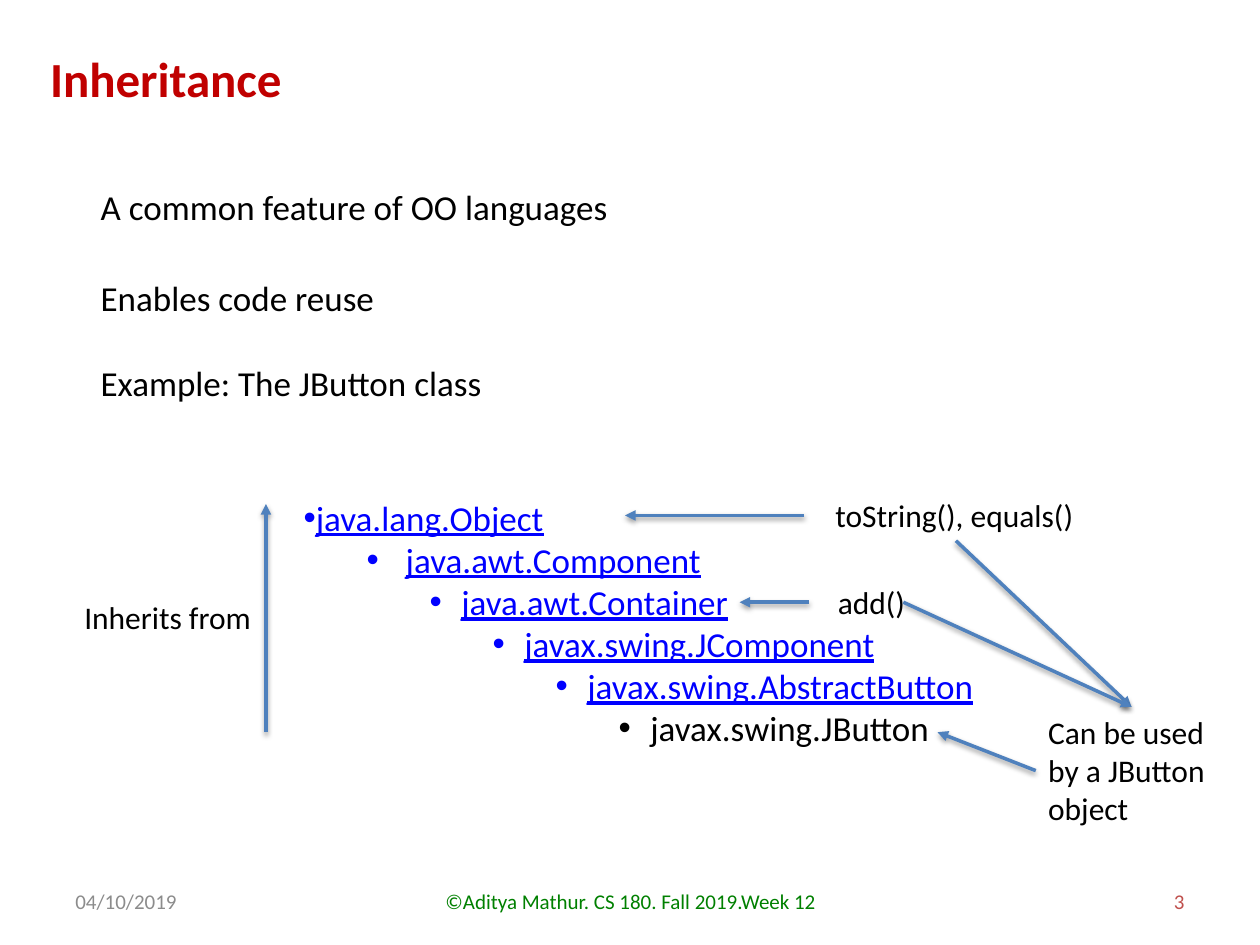
from lxml import etree
from pptx import Presentation
from pptx import util as u
from pptx.dml.color import RGBColor
from pptx.enum import shapes, text
from pptx.oxml.ns import qn

COLOURS = {"title": "C00000", "body": "000000", "link": "0000FF", "arrow": "4F81BD",
           "date": "8C8C8C", "credit": "008000", "number": "C0504D"}
FONT = "Calibri"


def colour(name):
    return RGBColor.from_string(COLOURS[name])


def format_para(para, size, tint, bold=False, underline=False):
    for span in para.runs:
        span.font.name = FONT
        span.font.size = u.Pt(size)
        span.font.bold = bold
        span.font.underline = underline
        span.font.color.rgb = colour(tint)


def add_text(page, place, words, size=18, tint="body", bold=False, wrap=False,
             align=text.PP_ALIGN.LEFT, anchor=text.MSO_ANCHOR.TOP):
    box = page.shapes.add_textbox(*(u.Cm(value) for value in place))
    frame = box.text_frame
    frame.text = words
    frame.word_wrap = wrap
    frame.vertical_anchor = anchor
    for para in frame.paragraphs:
        para.alignment = align
        format_para(para, size, tint, bold)
    return box


def add_arrow(page, start, end):
    arrow = page.shapes.add_connector(shapes.MSO_CONNECTOR.STRAIGHT,
                                      *(u.Cm(value) for value in (*start, *end)))
    arrow.line.color.rgb = colour("arrow")
    arrow.line.width = u.Pt(2)
    properties = arrow._element.spPr
    etree.SubElement(properties.find(qn("a:ln")), qn("a:tailEnd"), type="triangle")
    # Soft shadow straight below the line
    effects = etree.SubElement(properties, qn("a:effectLst"))
    shadow = etree.SubElement(effects, qn("a:outerShdw"), blurRad=str(u.Pt(3.1)),
                              dist=str(u.Pt(1.6)), dir="5400000", rotWithShape="0")
    black = etree.SubElement(shadow, qn("a:srgbClr"), val="000000")
    etree.SubElement(black, qn("a:alpha"), val="38000")
    return arrow


def add_footer(page, left, top, width, height):
    side, middle = 5.92, 8.05
    parts = [
        (0, side, "04/10/2019", "date", text.PP_ALIGN.LEFT),
        (7.42, middle, "©Aditya Mathur. CS 180. Fall 2019.Week 12", "credit",
         text.PP_ALIGN.CENTER),
        (width - side, side, "3", "number", text.PP_ALIGN.RIGHT),
    ]
    for offset, part_width, words, tint, align in parts:
        add_text(page, (left + offset, top, part_width, height), words, 12, tint,
                 wrap=True, align=align, anchor=text.MSO_ANCHOR.MIDDLE)


def add_points(page, left, top):
    points = [(0, 10.82, "A common feature of OO languages"),
              (1.83, 6.07, "Enables code reuse"),
              (3.55, 8.28, "Example: The JButton class")]
    for offset, width, words in points:
        add_text(page, (left, top + offset, width, 1.12), words, 20)


def add_hierarchy(page, left, top, width, height):
    classes = ["java.lang.Object", "java.awt.Component", "java.awt.Container",
               "javax.swing.JComponent", "javax.swing.AbstractButton",
               "javax.swing.JButton"]
    box = add_text(page, (left, top, width, height), "\n".join(classes), 20, wrap=True)
    last = len(classes) - 1
    for level, para in enumerate(box.text_frame.paragraphs):
        para.level = level
        linked = level < last
        format_para(para, 20, "link" if linked else "body", underline=linked)
        # Each level steps in by 1.27 cm; the second has a wider bullet gap
        gap = (0, 0.79)[level] if level < 2 else 0.64
        margin = 1.27 * level + gap if level else 0
        properties = para._p.get_or_add_pPr()
        properties.set("marL", str(u.Cm(margin)))
        properties.set("indent", str(-u.Cm(gap)))
        etree.SubElement(properties, qn("a:buFont"), typeface="Arial")
        etree.SubElement(properties, qn("a:buChar"), char="•")


def add_annotations(page, left, top):
    def at(x, y):
        return left + x, top + y

    # Labels
    add_text(page, (*at(0, 2.06), 3.91, 1.02), "Inherits from")
    object_methods = add_text(page, (*at(15.14, 0), 5.36, 1.02), "toString(), equals()")
    add_text(page, (*at(15.19, 1.75), 1.88, 1.02), "add()")
    usage = add_text(page, (*at(19.43, 4.37), 3.86, 2.57),
                     "Can be used\nby a JButton\nobject")

    # Arrows to the classes
    add_arrow(page, at(3.91, 4.88), at(3.91, 0.28))
    add_arrow(page, at(14.76, 0.51), at(11.15, 0.51))
    add_arrow(page, at(14.86, 2.26), at(13.46, 2.26))
    to_button = add_arrow(page, at(19.43, 5.66), at(17.45, 4.88))
    to_button.begin_connect(usage, 1)

    # Arrows from the methods to their use
    from_object = add_arrow(page, at(17.82, 1.02), at(21.36, 4.37))
    from_object.begin_connect(object_methods, 2)
    from_object.end_connect(usage, 0)
    from_container = add_arrow(page, at(16.76, 2.26), at(21.36, 4.37))
    from_container.end_connect(usage, 0)


def main():
    deck = Presentation()
    deck.slide_width, deck.slide_height = u.Cm(25.4), u.Cm(19.05)
    page = deck.slides.add_slide(deck.slide_layouts[6])
    add_footer(page, 1.27, 17.65, 22.86, 1.02)
    add_text(page, (0.76, 0.86, 15.82, 1.45), "Inheritance", 28, "title",
             bold=True, wrap=True)
    add_points(page, 1.78, 3.61)
    add_hierarchy(page, 5.87, 9.88, 14.35, 5.38)
    add_annotations(page, 1.45, 9.88)
    deck.save("out.pptx")


if __name__ == "__main__":
    main()
